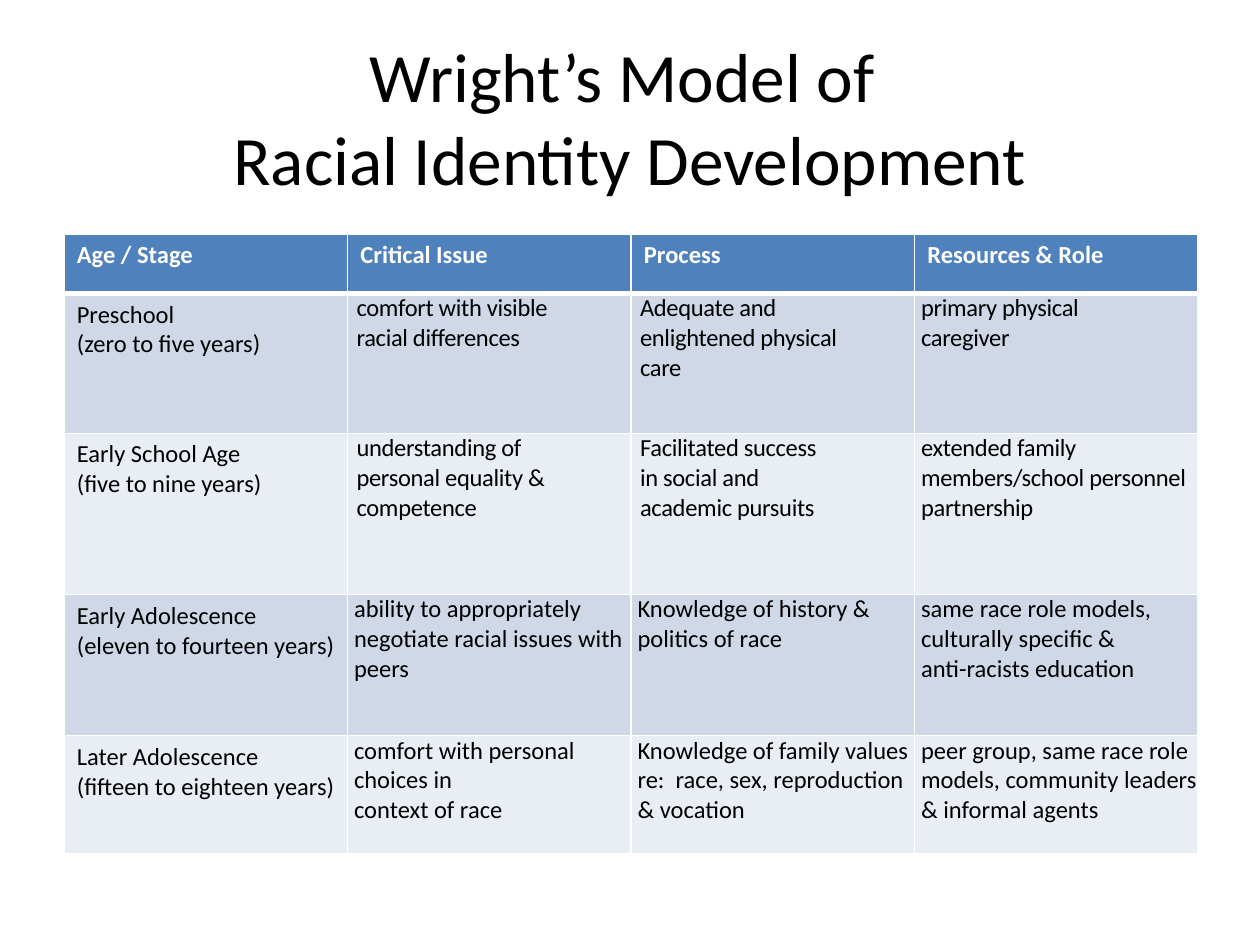
from lxml.etree import SubElement
from pptx import Presentation
from pptx.dml.color import RGBColor
from pptx.enum.text import MSO_ANCHOR, MSO_AUTO_SIZE, PP_ALIGN
from pptx.oxml.ns import qn
from pptx.util import Inches, Pt

# Content
TITLE = "Wright’s Model of \vRacial Identity Development"
HEADERS = ["Age / Stage", "Critical Issue", "Process", "Resources & Role"]
STAGES = [
    ["Preschool\n(zero to five years)",
     "comfort with visible\nracial differences",
     "Adequate and\nenlightened physical\ncare",
     "primary physical\ncaregiver"],
    ["Early School Age\n(five to nine years)",
     "understanding of\npersonal equality &\ncompetence",
     "Facilitated success\nin social and\nacademic pursuits",
     "extended family\nmembers/school personnel partnership"],
    ["Early Adolescence\n(eleven to fourteen years)",
     "ability to appropriately\nnegotiate racial issues with peers",
     "Knowledge of history & politics of race",
     "same race role models, culturally specific &\nanti-racists education"],
    ["Later Adolescence\n(fifteen to eighteen years)",
     "comfort with personal choices in\ncontext of race",
     "Knowledge of family values re:  race, sex, reproduction & vocation",
     "peer group, same race role models, community leaders & informal agents"],
]

# Layout and colours
COLUMN_WIDTH = 2.25
ROW_HEIGHTS = [0.47, 1.11, 1.28, 1.12, 0.94]
FONT = "Calibri"
BLACK = RGBColor(0x00, 0x00, 0x00)
WHITE = RGBColor(0xFF, 0xFF, 0xFF)
HEADER_BLUE = RGBColor(0x4F, 0x81, 0xBD)
BANDS = [RGBColor(0xD0, 0xD8, 0xE8), RGBColor(0xE9, 0xED, 0xF4)]


def write_text(frame, text, size=14, color=BLACK, bold=False,
               align=PP_ALIGN.LEFT, indent=0, spacing=0):
    """Write one paragraph per line of text, all in the same format."""
    frame.word_wrap = True
    frame.text = text
    for paragraph in frame.paragraphs:
        paragraph.alignment = align
        properties = paragraph._p.get_or_add_pPr()
        properties.set("marL", str(Inches(indent)))
        properties.set("indent", "0")
        for run in paragraph.runs:
            run.font.name = FONT
            run.font.size = Pt(size)
            run.font.bold = bold
            run.font.color.rgb = color
            if spacing:
                run._r.get_or_add_rPr().set("spc", str(round(spacing * 100)))


def format_cell(cell, fill, top=1, bottom=1):
    """Fill a cell and give it white borders; widths are in points."""
    properties = cell._tc.get_or_add_tcPr()
    for side, width in (("L", 1), ("R", 1), ("T", top), ("B", bottom)):
        line = SubElement(properties, qn(f"a:ln{side}"), w=str(Pt(width)))
        SubElement(SubElement(line, qn("a:solidFill")), qn("a:srgbClr"), val=str(WHITE))
    cell.fill.solid()
    cell.fill.fore_color.rgb = fill


def build_title(slide):
    title = slide.shapes.title
    title.left, title.top = Inches(0.5), Inches(0.3)
    title.width, title.height = Inches(9), Inches(1.25)
    write_text(title.text_frame, TITLE, size=39.6, align=PP_ALIGN.CENTER)
    title.text_frame.vertical_anchor = MSO_ANCHOR.MIDDLE
    title.text_frame.auto_size = MSO_AUTO_SIZE.NONE


def build_table(slide):
    table = slide.shapes.add_table(
        len(ROW_HEIGHTS), len(HEADERS), Inches(0.51), Inches(1.86),
        Inches(COLUMN_WIDTH * len(HEADERS)), Inches(sum(ROW_HEIGHTS))).table
    for column in table.columns:
        column.width = Inches(COLUMN_WIDTH)
    for row, height in zip(table.rows, ROW_HEIGHTS):
        row.height = Inches(height)

    # Header row
    for column, header in enumerate(HEADERS):
        cell = table.cell(0, column)
        write_text(cell.text_frame, header, color=WHITE, bold=True)
        format_cell(cell, HEADER_BLUE, bottom=3)

    # Banded stage rows: all but the first column sit close to the cell edge
    for row, stage in enumerate(STAGES, start=1):
        for column, text in enumerate(stage):
            cell = table.cell(row, column)
            indent = spacing = 0
            if column > 0:
                cell.margin_left = cell.margin_right = 0
                cell.margin_top = cell.margin_bottom = 0
                indent = 0.07 if row <= 2 and column <= 2 else 0.05
                spacing = -0.2 if row <= 2 else 0
            write_text(cell.text_frame, text, indent=indent, spacing=spacing)
            format_cell(cell, BANDS[(row - 1) % 2], top=3 if row == 1 else 1)


def main():
    presentation = Presentation()
    presentation.slide_width = Inches(10)
    presentation.slide_height = Inches(7.5)
    slide = presentation.slides.add_slide(presentation.slide_layouts[5])
    build_title(slide)
    build_table(slide)
    presentation.save("out.pptx")


if __name__ == "__main__":
    main()
